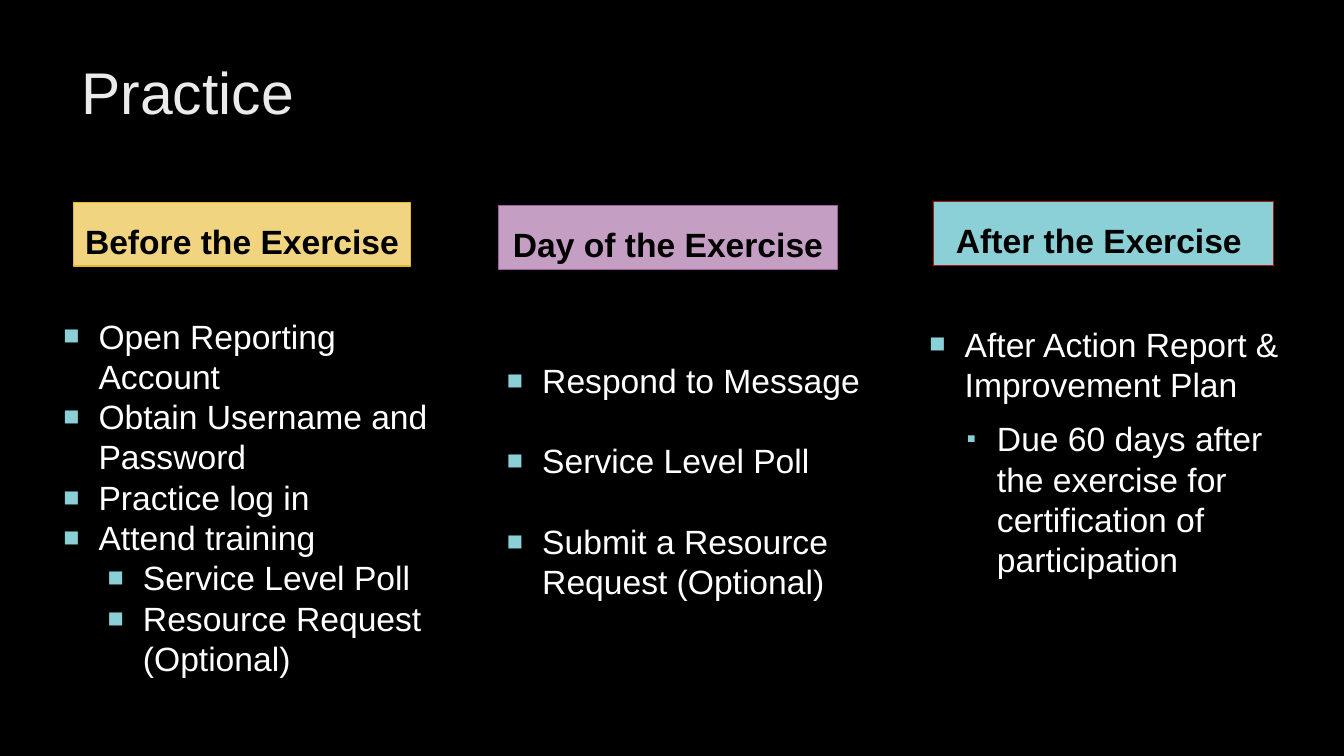
"""Build the Practice slide: three exercise phases, each a header bar over a bulleted list."""
from lxml.etree import SubElement
from pptx import Presentation
from pptx.dml.color import RGBColor
from pptx.enum.shapes import MSO_SHAPE as SHAPE
from pptx.enum.text import MSO_ANCHOR as ANCHOR, PP_ALIGN as ALIGN
from pptx.oxml.ns import qn
from pptx.util import Inches, Pt

FONT, TEAL, WHITE = "Arial", "8AD0D6", "FFFFFF"
TITLE = "Practice"
LEVELS = {"main": (0.48, -0.35, "■"), "sub": (0.92, -0.35, "■"), "note": (0.8, -0.3, "▪")}
PHASES = [
    dict(head="Before the Exercise", bar=(0.73, 2.01, 3.34, 0.63), fill="F0D47F", line="E6B729",
         body=(0.4, 3.08, 4, 3.49), gap=0,
         items=[("main", "Open Reporting Account"), ("main", "Obtain Username and Password"),
                ("main", "Practice log in"), ("main", "Attend training"),
                ("sub", "Service Level Poll"), ("sub", "Resource Request (Optional)")]),
    dict(head="Day of the Exercise", bar=(4.94, 2.04, 3.37, 0.63), fill="C59EC3", line="9E5E9B",
         body=(4.8, 3.52, 4, 2.83), gap=28.8,
         items=[("main", "Respond to Message"), ("main", "Service Level Poll"),
                ("main", "Submit a Resource Request (Optional)")]),
    dict(head="After the Exercise ", bar=(9.26, 2, 3.37, 0.63), fill=TEAL, line="B01513",
         body=(8.99, 3.16, 4, 4.3), gap=10,
         items=[("main", "After Action Report & Improvement Plan"),
                ("note", "Due 60 days after the exercise for certification of participation")]),
]


def rgb(value):
    return RGBColor.from_string(value)


def add_run(p, text, size, color, bold=False):
    r = p.add_run()
    r.text = text
    r.font.name, r.font.size, r.font.bold = FONT, Pt(size), bold
    r.font.color.rgb = rgb(color)


def add_box(s, box):
    tf = s.shapes.add_textbox(*map(Inches, box)).text_frame
    tf.word_wrap = True
    return tf


def set_bullet(p, level):
    left, hang, char = LEVELS[level]
    pPr = p._p.get_or_add_pPr()
    pPr.set("marL", str(Inches(left)))
    pPr.set("indent", str(Inches(hang)))
    color = SubElement(pPr, qn("a:buClr"))
    SubElement(color, qn("a:srgbClr"), val=TEAL)
    SubElement(pPr, qn("a:buSzPct"), val="80000")
    SubElement(pPr, qn("a:buFont"), typeface=FONT)
    SubElement(pPr, qn("a:buChar"), char=char)
    if level != "main":
        p.level = 1


def add_header(s, phase):
    sp = s.shapes.add_shape(SHAPE.RECTANGLE, *map(Inches, phase["bar"]))
    sp.shadow.inherit = False
    sp.fill.solid()
    sp.fill.fore_color.rgb = rgb(phase["fill"])
    sp.line.color.rgb = rgb(phase["line"])
    sp.line.width = Pt(0.75)
    tf = sp.text_frame
    tf.word_wrap, tf.vertical_anchor = True, ANCHOR.BOTTOM
    p = tf.paragraphs[0]
    p.alignment = ALIGN.CENTER
    add_run(p, phase["head"], 24, "000000", True)


def add_list(s, phase):
    tf = add_box(s, phase["body"])
    for i, (level, text) in enumerate(phase["items"]):
        p = tf.add_paragraph() if i else tf.paragraphs[0]
        set_bullet(p, level)
        if i:
            p.space_before = Pt(phase["gap"])
        add_run(p, text, 24, WHITE)


def main():
    prs = Presentation()
    prs.slide_width, prs.slide_height = Inches(13.33), Inches(7.5)
    s = prs.slides.add_slide(prs.slide_layouts[6])
    s.background.fill.solid()
    s.background.fill.fore_color.rgb = rgb("000000")
    add_run(add_box(s, (0.71, 0.5, 10.29, 1.53)).paragraphs[0], TITLE, 42, "EBEBEB")
    for phase in PHASES:
        add_header(s, phase)
        add_list(s, phase)
    prs.save("out.pptx")


if __name__ == "__main__":
    main()
